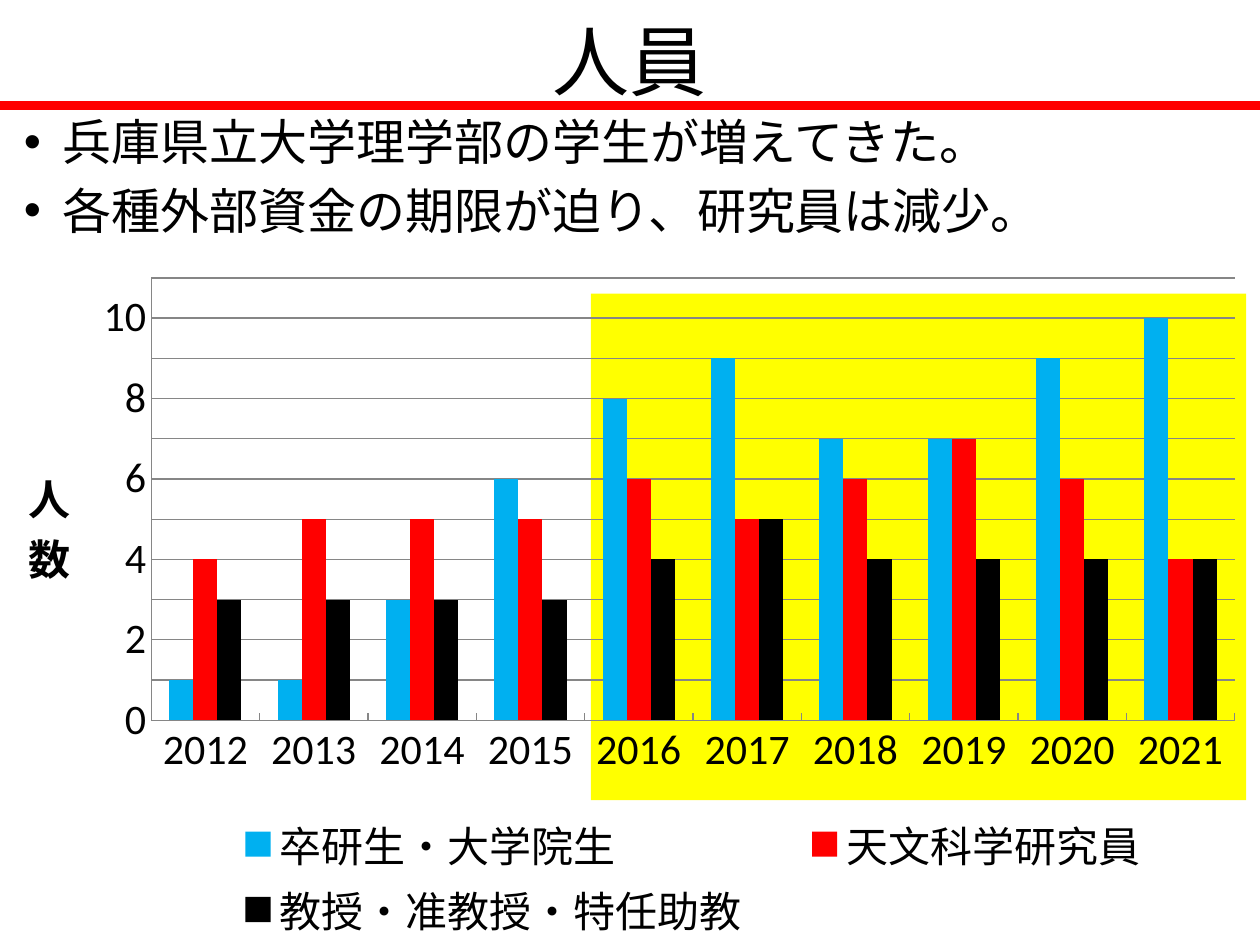
from lxml import etree
from pptx import Presentation
from pptx.chart.data import CategoryChartData
from pptx.dml.color import RGBColor
from pptx.enum.chart import XL_CHART_TYPE, XL_LEGEND_POSITION, XL_TICK_MARK
from pptx.enum.lang import MSO_LANGUAGE_ID
from pptx.enum.shapes import MSO_CONNECTOR, MSO_SHAPE
from pptx.enum.text import MSO_ANCHOR, PP_ALIGN
from pptx.oxml.ns import qn
from pptx.util import Cm, Pt

COLUMN = XL_CHART_TYPE.COLUMN_CLUSTERED
BOTTOM = XL_LEGEND_POSITION.BOTTOM
TICK_IN = XL_TICK_MARK.INSIDE
JAPANESE = MSO_LANGUAGE_ID.JAPANESE
STRAIGHT = MSO_CONNECTOR.STRAIGHT
RECT = MSO_SHAPE.RECTANGLE
MIDDLE = MSO_ANCHOR.MIDDLE
CENTER = PP_ALIGN.CENTER

COLORS = {
    "text": "000000",
    "rule": "FF0000",
    "highlight": "FFFF00",
    "grid": "868686",
    "students": "00B0F0",
    "researchers": "FF0000",
    "faculty": "000000",
}
YEARS = [str(year) for year in range(2012, 2022)]
STAFF = [
    ("卒研生・大学院生", "students", (1, 1, 3, 6, 8, 9, 7, 7, 9, 10)),
    ("天文科学研究員", "researchers", (4, 5, 5, 5, 6, 5, 6, 7, 6, 4)),
    ("教授・准教授・特任助教", "faculty", (3, 3, 3, 3, 4, 5, 4, 4, 4, 4)),
]
BULLETS = [
    "兵庫県立大学理学部の学生が増えてきた。",
    "各種外部資金の期限が迫り、研究員は減少。",
]


def rgb(name):
    return RGBColor.from_string(COLORS[name])


def set_font(font, size, name="Calibri"):
    font.size = Pt(size)
    font.name = name
    font.color.rgb = rgb("text")


def add_run(p, text, size, name="Calibri"):
    r = p.add_run()
    r.text = text
    set_font(r.font, size, name)
    r.font.language_id = JAPANESE
    return r


def add_text_frame(slide, x, y, w, h):
    tf = slide.shapes.add_textbox(x, y, w, h).text_frame
    tf.word_wrap = True
    return tf


def add_title(slide, x, y, w, h):
    tf = add_text_frame(slide, x, y, w, h)
    tf.vertical_anchor = MIDDLE
    p = tf.paragraphs[0]
    p.alignment = CENTER
    add_run(p, "人員", 44, "Arial")


def add_rule(slide, x, y, w):
    line = slide.shapes.add_connector(STRAIGHT, x, y, x + w, y)
    line.line.color.rgb = rgb("rule")
    line.line.width = Pt(5)
    etree.SubElement(line._element.spPr, qn("a:effectLst"))


def add_bullets(slide, x, y, w, h):
    tf = add_text_frame(slide, x, y, w, h)
    for i, text in enumerate(BULLETS):
        p = tf.add_paragraph() if i else tf.paragraphs[0]
        p.space_before = Pt(5.6)
        pPr = p._p.get_or_add_pPr()
        pPr.set("marL", str(Cm(1.02)))
        pPr.set("indent", str(Cm(-0.79)))
        etree.SubElement(pPr, qn("a:buFont")).set("typeface", "Arial")
        etree.SubElement(pPr, qn("a:buChar")).set("char", "•")
        add_run(p, text, 28)


def add_highlight(slide, x, y, w, h):
    sp = slide.shapes.add_shape(RECT, x, y, w, h)
    sp.shadow.inherit = False
    sp.fill.solid()
    sp.fill.fore_color.rgb = rgb("highlight")
    sp.line.fill.background()


def make_layout(x, y, w, h, inner=False):
    layout = etree.Element(qn("c:layout"))
    manual = etree.SubElement(layout, qn("c:manualLayout"))
    values = [("layoutTarget", "inner")] if inner else []
    values += [("xMode", "edge"), ("yMode", "edge")]
    values += [("x", x), ("y", y), ("w", w), ("h", h)]
    for tag, value in values:
        etree.SubElement(manual, qn(f"c:{tag}")).set("val", str(value))
    return layout


def format_axis(axis):
    axis.major_tick_mark = TICK_IN
    axis.minor_tick_mark = XL_TICK_MARK.NONE
    axis.format.line.color.rgb = rgb("grid")
    set_font(axis.tick_labels.font, 24)


def add_staff_chart(slide, x, y, w, h):
    data = CategoryChartData()
    data.categories = YEARS
    for name, _, values in STAFF:
        data.add_series(name, values)
    chart = slide.shapes.add_chart(COLUMN, x, y, w, h, data).chart
    chart.has_title = False
    set_font(chart.font, 18)

    plot = chart.plots[0]
    plot.gap_width = 150
    plot.overlap = 0
    plot.vary_by_categories = False
    for series, (_, color, _) in zip(plot.series, STAFF):
        series.format.fill.solid()
        series.format.fill.fore_color.rgb = rgb(color)

    format_axis(chart.category_axis)
    axis = chart.value_axis
    format_axis(axis)
    axis.minimum_scale, axis.maximum_scale, axis.major_unit = 0, 11, 1
    axis.has_major_gridlines = True
    axis.major_gridlines.format.line.color.rgb = rgb("grid")
    tf = axis.axis_title.text_frame
    add_run(tf.paragraphs[0], "人数", 24).font.bold = True
    bodyPr = tf._txBody.find(qn("a:bodyPr"))
    bodyPr.set("rot", "0")
    bodyPr.set("vert", "wordArtVertRtl")

    chart.has_legend = True
    legend = chart.legend
    legend.position = BOTTOM
    legend.include_in_layout = False
    set_font(legend.font, 24)

    area = chart._chartSpace.chart.plotArea
    box = legend._element
    for parent in (area, box):
        for old in parent.findall(qn("c:layout")):
            parent.remove(old)
    area.insert(0, make_layout(0.12, 0.02, 0.86, 0.65, inner=True))
    box.find(qn("c:legendPos")).addnext(make_layout(0.15, 0.8, 0.8, 0.2))


def main():
    prs = Presentation()
    prs.slide_width, prs.slide_height = Cm(25.4), Cm(19.05)
    slide = prs.slides.add_slide(prs.slide_layouts[6])
    w = prs.slide_width
    add_highlight(slide, Cm(11.91), Cm(5.92), Cm(13.21), Cm(10.21))
    add_staff_chart(slide, 0, Cm(5.33), w, Cm(13.72))
    add_title(slide, 0, Cm(0.13), w, Cm(2.16))
    add_rule(slide, 0, Cm(2.13), w)
    add_bullets(slide, 0, Cm(2.13), w, Cm(2.79))
    prs.save("out.pptx")


if __name__ == "__main__":
    main()
